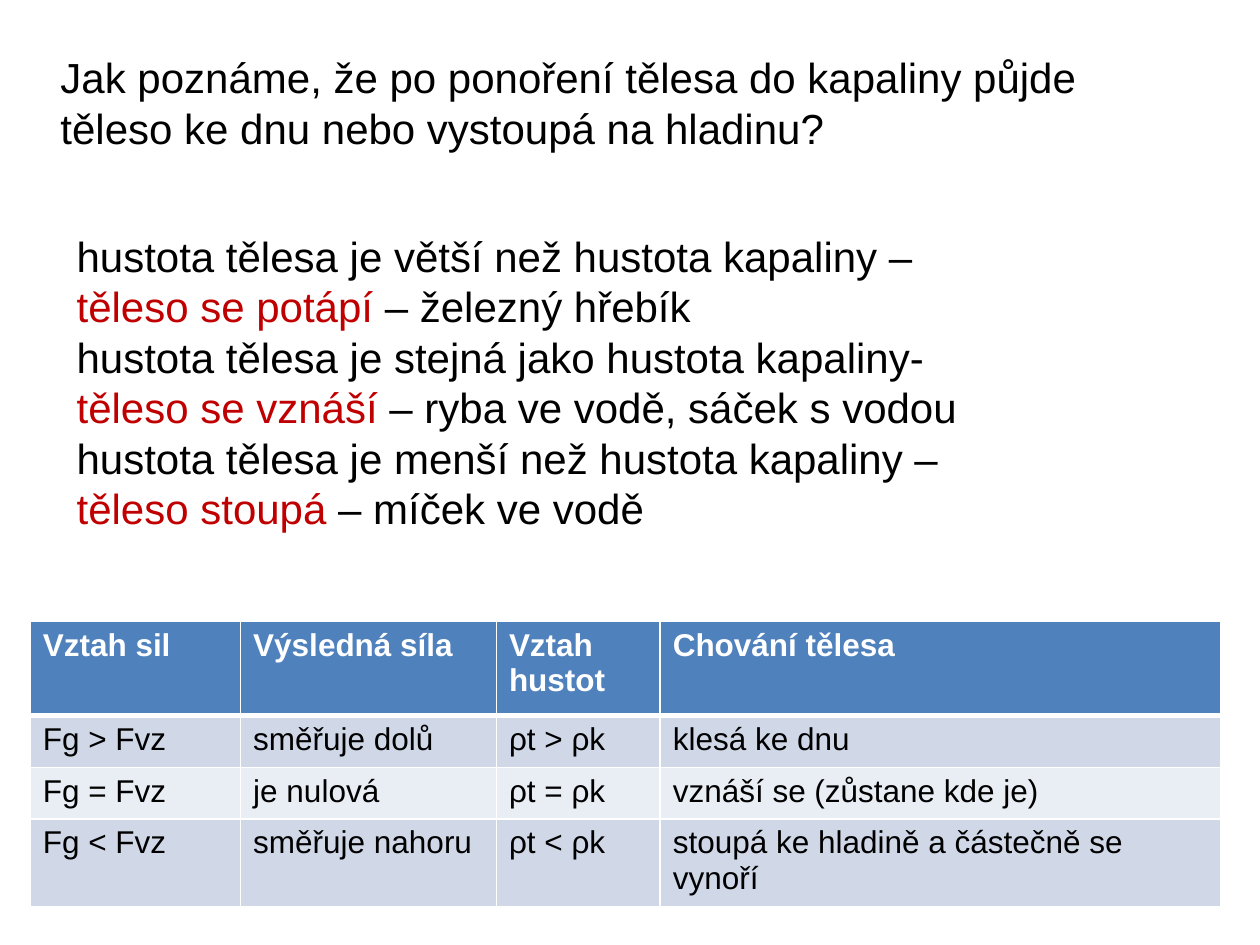
import dataclasses

import pptx
import pptx.dml.color
import pptx.enum.text
import pptx.oxml
import pptx.oxml.ns
import pptx.util
from pptx.util import Inches


@dataclasses.dataclass(frozen=True)
class Theme:
    font: str = "Arial"
    text: str = "000000"
    accent: str = "C00000"
    white: str = "FFFFFF"
    header: str = "4F81BD"
    bands: tuple = ("D0D8E8", "E9EDF4")
    body_size: int = 24
    table_size: int = 18
    rule: int = 1
    header_rule: int = 3


def rgb(value):
    return pptx.dml.color.RGBColor.from_string(value)


def add_run(p, text, *, font, size, color, bold=False):
    r = p.add_run()
    r.text = text
    r.font.name = font
    r.font.size = pptx.util.Pt(size)
    r.font.bold = bold
    r.font.color.rgb = rgb(color)
    return r


class SlideBuilder:
    """Holds the theme and the current slide and adds elements to it."""

    def __init__(self, prs, theme):
        self.theme = theme
        self.s = prs.slides.add_slide(prs.slide_layouts[5])

    def place(self, sp, box):
        sp.left, sp.top, sp.width, sp.height = (Inches(v) for v in box)

    def frame(self, sp):
        tf = sp.text_frame
        tf.word_wrap = True
        tf.auto_size = pptx.enum.text.MSO_AUTO_SIZE.SHAPE_TO_FIT_TEXT
        tf.vertical_anchor = pptx.enum.text.MSO_ANCHOR.TOP
        return tf

    def body_run(self, p, text, color=None):
        t = self.theme
        p.alignment = pptx.enum.text.PP_ALIGN.LEFT
        add_run(p, text, font=t.font, size=t.body_size, color=color or t.text)

    def title(self, text, box):
        sp = self.s.shapes.title
        self.place(sp, box)
        self.body_run(self.frame(sp).paragraphs[0], text)

    def cases(self, items, box):
        sp = self.s.shapes.add_textbox(*(Inches(v) for v in box))
        tf = self.frame(sp)
        p = tf.paragraphs[0]
        for i, (condition, result, example) in enumerate(items):
            if i:
                p = tf.add_paragraph()
            self.body_run(p, condition)
            p = tf.add_paragraph()
            self.body_run(p, result, self.theme.accent)
            self.body_run(p, example)

    def border(self, cell, side, width):
        tc_pr = cell._tc.get_or_add_tcPr()
        ns = pptx.oxml.ns.nsdecls("a")
        tc_pr.append(pptx.oxml.parse_xml(
            f'<a:ln{side} {ns} w="{pptx.util.Pt(width)}"><a:solidFill>'
            f'<a:srgbClr val="{self.theme.white}"/></a:solidFill></a:ln{side}>'))

    def cell(self, cell, text, row):
        t = self.theme
        is_header = row == 0
        for side in "LRTB":
            thick = (is_header and side == "B") or (row == 1 and side == "T")
            self.border(cell, side, t.header_rule if thick else t.rule)
        cell.fill.solid()
        fill = t.header if is_header else t.bands[(row - 1) % len(t.bands)]
        cell.fill.fore_color.rgb = rgb(fill)
        add_run(cell.text_frame.paragraphs[0], text, font=t.font, size=t.table_size,
                color=t.white if is_header else t.text, bold=is_header)

    def table(self, rows, left, top, widths, heights):
        table = self.s.shapes.add_table(
            len(rows), len(widths), Inches(left), Inches(top),
            Inches(sum(widths)), Inches(sum(heights))).table
        for column, width in zip(table.columns, widths):
            column.width = Inches(width)
        for i, (row, height) in enumerate(zip(rows, heights)):
            table.rows[i].height = Inches(height)
            for j, text in enumerate(row):
                self.cell(table.cell(i, j), text, i)


CASES = [
    ("hustota tělesa je větší než hustota kapaliny –",
     "těleso se potápí ", "– železný hřebík"),
    ("hustota tělesa je stejná jako hustota kapaliny-",
     "těleso se vznáší ", "– ryba ve vodě, sáček s vodou"),
    ("hustota tělesa je menší než hustota kapaliny –",
     "těleso stoupá ", "– míček ve vodě"),
]

FORCES = [
    ("Vztah sil", "Výsledná síla", "Vztah hustot", "Chování tělesa"),
    ("Fg > Fvz", "směřuje dolů", "ρt > ρk", "klesá ke dnu"),
    ("Fg = Fvz", "je nulová", "ρt = ρk", "vznáší se (zůstane kde je)"),
    ("Fg < Fvz", "směřuje nahoru", "ρt < ρk", "stoupá ke hladině a částečně se vynoří"),
]


def main():
    prs = pptx.Presentation()
    prs.slide_width, prs.slide_height = Inches(10), Inches(7.5)
    slide = SlideBuilder(prs, Theme())
    slide.title("Jak poznáme, že po ponoření tělesa do kapaliny půjde těleso ke dnu "
                "nebo vystoupá na hladinu?", (0.38, 0.36, 9.06, 0.91))
    slide.cases(CASES, (0.51, 1.78, 8.92, 2.52))
    slide.table(FORCES, 0.24, 4.93, (1.67, 2.03, 1.3, 4.45), (0.75, 0.41, 0.41, 0.41))
    prs.save("out.pptx")


if __name__ == "__main__":
    main()
